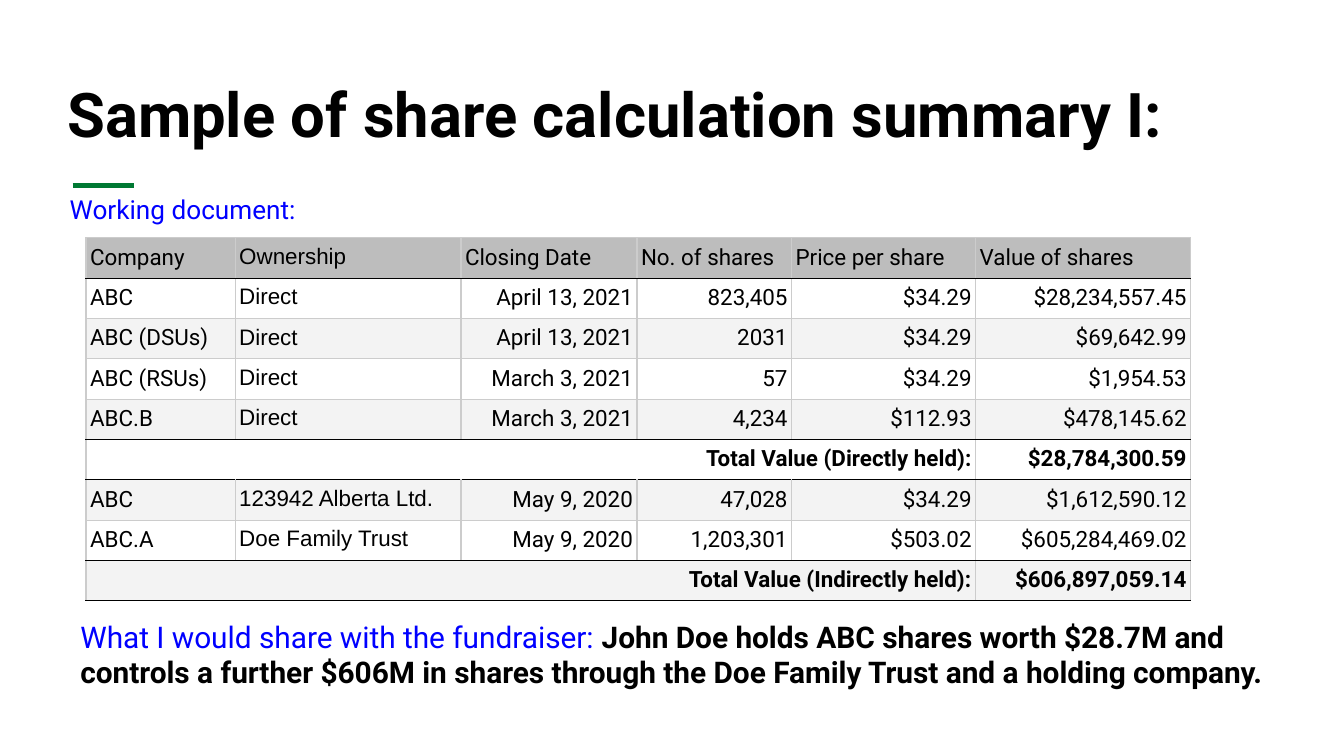
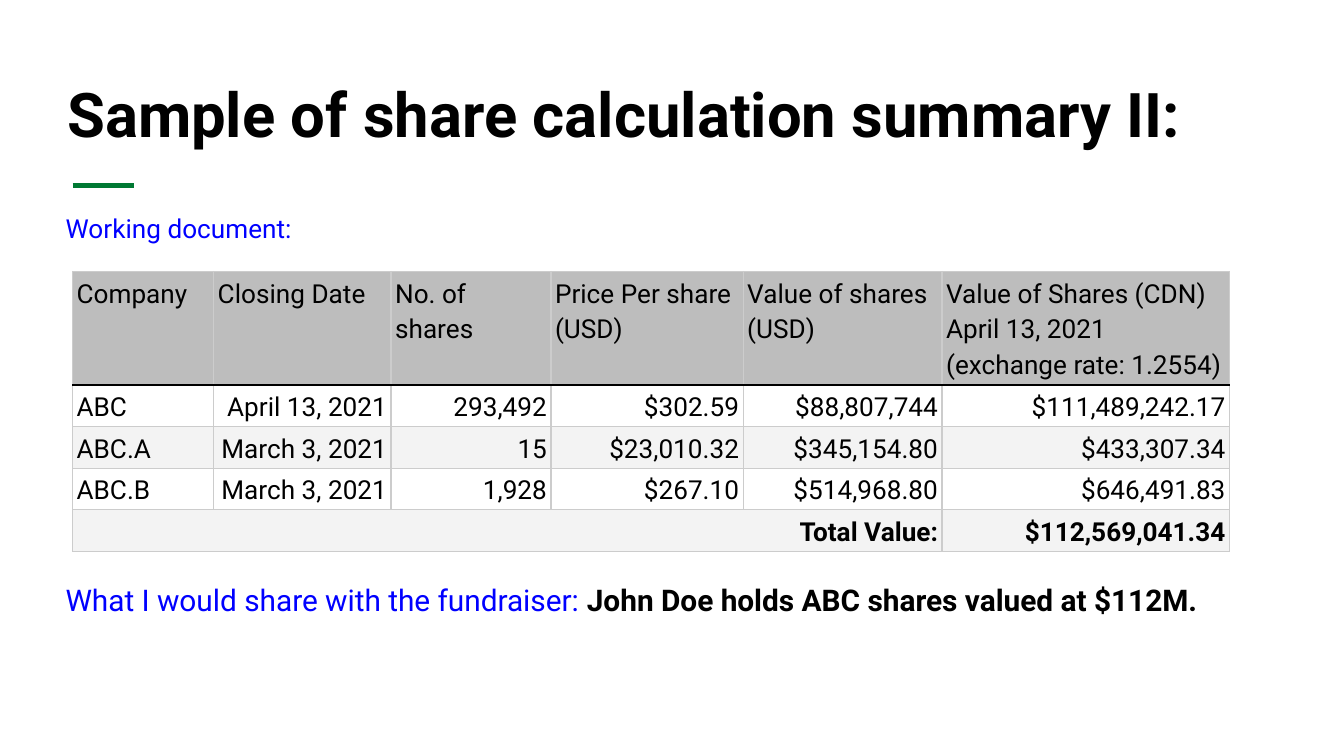
from lxml import etree
from pptx import Presentation, util as u
from pptx.dml.color import RGBColor
from pptx.enum import shapes, text
from pptx.oxml.ns import qn

BLACK = RGBColor(0x00, 0x00, 0x00)
WHITE = RGBColor(0xFF, 0xFF, 0xFF)
BLUE = RGBColor(0x00, 0x00, 0xFF)
GREEN = RGBColor(0x00, 0x79, 0x33)
HEADER_GREY = RGBColor(0xBD, 0xBD, 0xBD)
BAND_GREY = RGBColor(0xF3, 0xF3, 0xF3)
GRID_GREY = RGBColor(0xCC, 0xCC, 0xCC)
FONT, OWNER_FONT = "Roboto", "Arial"
WIDTH = 10
HEIGHT = WIDTH * 9 / 16
LABEL = "Working document:"
LEAD = "What I would share with the fundraiser:"

# A row of two entries is a total: its label spans every column but the last.
# "ruled" lists the rows that have a black line below them.
PAGES = [
    {
        "title": "Sample of share calculation summary I:",
        "label_at": (0.42, 1.34, 2.91, 0.44),
        "summary_at": (0.5, 4.5, 9.07, 0.74),
        "summary": " John Doe holds ABC shares worth $28.7M and controls a further "
                   "$606M in shares through the Doe Family Trust and a holding company.",
        "table_at": (0.64, 1.77),
        "columns": (1.11, 1.68, 1.31, 1.15, 1.37, 1.6),
        "header_height": 0.3,
        "row_height": 0.3,
        "size": 12,
        "ruled": {0, 4, 5, 7, 8},
        "rows": [
            ("Company", "Ownership", "Closing Date", "No. of shares",
             "Price per share", "Value of shares"),
            ("ABC", "Direct", "April 13, 2021", "823,405", "$34.29", "$28,234,557.45"),
            ("ABC (DSUs)", "Direct", "April 13, 2021", "2031", "$34.29", "$69,642.99"),
            ("ABC (RSUs)", "Direct", "March 3, 2021", "57", "$34.29", "$1,954.53"),
            ("ABC.B", "Direct", "March 3, 2021", "4,234", "$112.93", "$478,145.62"),
            ("Total Value (Directly held):", "$28,784,300.59"),
            ("ABC", "123942 Alberta Ltd.", "May 9, 2020", "47,028", "$34.29",
             "$1,612,590.12"),
            ("ABC.A", "Doe Family Trust", "May 9, 2020", "1,203,301", "$503.02",
             "$605,284,469.02"),
            ("Total Value (Indirectly held):", "$606,897,059.14"),
        ],
    },
    {
        "title": "Sample of share calculation summary II:",
        "label_at": (0.39, 1.48, 2.91, 0.44),
        "summary_at": (0.39, 4.23, 8.76, 0.47),
        "summary": " John Doe holds ABC shares valued at $112M.",
        "table_at": (0.54, 2.02),
        "columns": (1.05, 1.32, 1.19, 1.43, 1.48, 2.14),
        "header_height": 0.71,
        "row_height": 0.31,
        "size": 14,
        "ruled": {0},
        "rows": [
            ("Company", "Closing Date", "No. of shares", "Price Per share (USD)",
             "Value of shares (USD)",
             "Value of Shares (CDN) April 13, 2021\n(exchange rate: 1.2554)"),
            ("ABC", "April 13, 2021", "293,492", "$302.59", "$88,807,744",
             "$111,489,242.17"),
            ("ABC.A", "March 3, 2021", "15", "$23,010.32", "$345,154.80", "$433,307.34"),
            ("ABC.B", "March 3, 2021", "1,928", "$267.10", "$514,968.80", "$646,491.83"),
            ("Total Value:", "$112,569,041.34"),
        ],
    },
]


def style(span, size, color=BLACK, bold=False, font=FONT):
    span.font.name, span.font.size = font, u.Pt(size)
    span.font.color.rgb, span.font.bold = color, bold


def set_margins(target, across, down):
    target.margin_left = target.margin_right = u.Inches(across)
    target.margin_top = target.margin_bottom = u.Inches(down)


def add_text(page, place, spans, margins=(0.1, 0.1)):
    """Add a one-paragraph box; spans are (words, size, colour, bold)."""
    box = page.shapes.add_textbox(*map(u.Inches, place))
    frame = box.text_frame
    frame.word_wrap = True
    set_margins(frame, *margins)
    for words, *look in spans:
        span = frame.paragraphs[0].add_run()
        span.text = words
        style(span, *look)
    return frame


def add_title(page, words):
    frame = add_text(page, (0.43, 0.5, 9.15, 0.75), [(words, 33, BLACK, True)], (0.07, 0.04))
    frame.vertical_anchor = text.MSO_ANCHOR.MIDDLE
    frame.paragraphs[0].line_spacing = 0.9
    ends = map(u.Inches, (0.54, 1.38, 1, 1.38))
    accent = page.shapes.add_connector(shapes.MSO_CONNECTOR.STRAIGHT, *ends)
    accent.line.color.rgb, accent.line.width = GREEN, u.Pt(3)
    etree.SubElement(accent._element.spPr, qn("a:effectLst"))


def set_borders(cell, top, bottom):
    sides = (("L", GRID_GREY), ("R", GRID_GREY), ("T", top), ("B", bottom))
    properties = cell._tc.get_or_add_tcPr()
    for place, (side, color) in enumerate(sides):
        line = etree.Element(qn("a:ln" + side), w=str(u.Pt(0.75)))
        fill = etree.SubElement(line, qn("a:solidFill"))
        etree.SubElement(fill, qn("a:srgbClr"), val=str(color))
        properties.insert(place, line)


def fill_cell(cell, words, size, font, bold, right):
    cell.text_frame.text = words
    for para in cell.text_frame.paragraphs:
        para.line_spacing = 1.15
        para.alignment = text.PP_ALIGN.RIGHT if right else text.PP_ALIGN.LEFT
        for span in para.runs:
            style(span, size, BLACK, bold, font)


def add_share_table(page, data):
    rows, columns, ruled = data["rows"], data["columns"], data["ruled"]
    heights = [data["header_height"]] + [data["row_height"]] * (len(rows) - 1)
    place = (*data["table_at"], sum(columns), sum(heights))
    table = page.shapes.add_table(len(rows), len(columns), *map(u.Inches, place)).table
    table.first_row = table.horz_banding = False
    for column, width in zip(table.columns, columns):
        column.width = u.Inches(width)

    last = len(columns) - 1
    headings = rows[0]
    left_aligned = ("Company", "Ownership")
    for r, (row, height) in enumerate(zip(rows, heights)):
        table.rows[r].height = u.Inches(height)
        shade = HEADER_GREY if r == 0 else WHITE if r % 2 else BAND_GREY
        top = BLACK if r - 1 in ruled else GRID_GREY
        bottom = BLACK if r in ruled else GRID_GREY
        for c in range(len(columns)):
            cell = table.cell(r, c)
            set_margins(cell, 0.03, 0.02)
            cell.fill.solid()
            cell.fill.fore_color.rgb = shade
            set_borders(cell, top, bottom)

        is_total = len(row) == 2
        if is_total:
            table.cell(r, 0).merge(table.cell(r, last - 1))
        for c, words in zip((0, last) if is_total else range(len(columns)), row):
            font = OWNER_FONT if headings[c] == "Ownership" else FONT
            right = is_total or (r > 0 and headings[c] not in left_aligned)
            fill_cell(table.cell(r, c), words, data["size"], font, is_total, right)


def main():
    deck = Presentation()
    deck.slide_width, deck.slide_height = u.Inches(WIDTH), u.Inches(HEIGHT)
    for data in PAGES:
        page = deck.slides.add_slide(deck.slide_layouts[6])
        add_title(page, data["title"])
        summary = [(LEAD, 16, BLUE), (data["summary"], 16, BLACK, True)]
        for place, spans in ((data["label_at"], [(LABEL, 14, BLUE)]),
                             (data["summary_at"], summary)):
            add_text(page, place, spans).auto_size = text.MSO_AUTO_SIZE.SHAPE_TO_FIT_TEXT
        add_share_table(page, data)
    deck.save("out.pptx")


if __name__ == "__main__":
    main()
